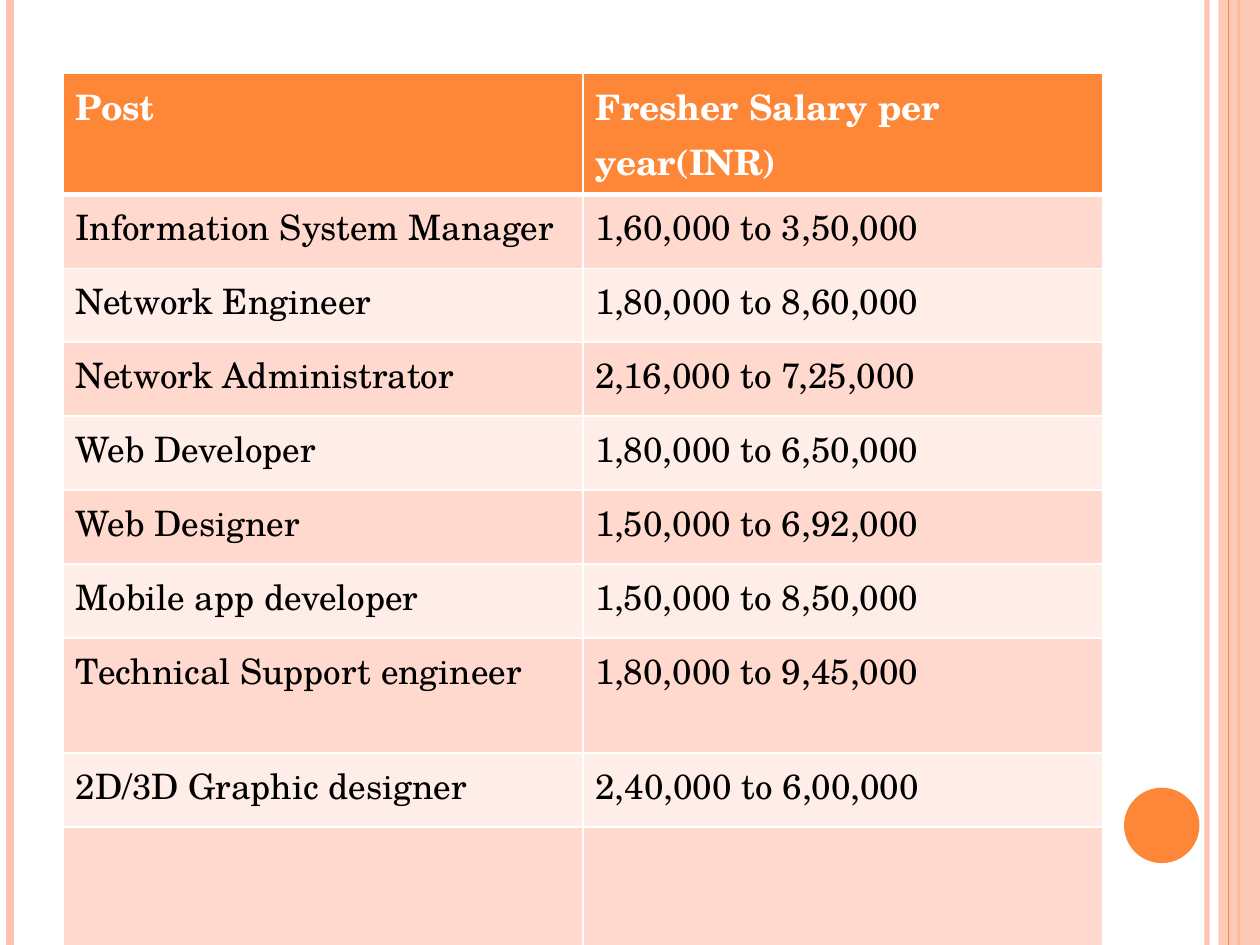
from dataclasses import dataclass

import pptx
import pptx.dml.color
import pptx.enum.shapes
import pptx.oxml
import pptx.oxml.ns
import pptx.util
from pptx.util import Cm

RGBColor = pptx.dml.color.RGBColor
Shapes = pptx.enum.shapes.MSO_SHAPE

ORANGE = RGBColor(0xFE, 0x86, 0x37)
PEACH = RGBColor(0xFE, 0xC3, 0xAE)
BAND_DARK = RGBColor(0xFF, 0xD9, 0xCE)
BAND_LIGHT = RGBColor(0xFF, 0xED, 0xE8)
WHITE = RGBColor(0xFF, 0xFF, 0xFF)
BLACK = RGBColor(0, 0, 0)

SLIDE_WIDTH, SLIDE_HEIGHT = Cm(25.4), Cm(19.05)
ROW_HEIGHT, TALL_ROW_HEIGHT, LAST_ROW_HEIGHT = Cm(1.49), Cm(2.32), Cm(2.69)
COLUMN_WIDTH = Cm(10.48)

TEXT_FORMAT = {"name": "TeX Gyre Schola", "size": pptx.util.Pt(20)}
HEADER_FORMAT = TEXT_FORMAT | {"bold": True}
BODY_FORMAT = TEXT_FORMAT | {"bold": False}


@dataclass(frozen=True)
class Stripe:
    x: float
    color: RGBColor
    points: float
    opacity: int = 100


@dataclass(frozen=True)
class Accent:
    preset: Shapes
    left: float
    top: float
    width: float
    height: float
    color: RGBColor
    opacity: int = 100


@dataclass(frozen=True)
class Salary:
    post: str
    pay: str
    height: Cm = ROW_HEIGHT


BACK_STRIPES = [
    Stripe(24.33, PEACH, 3, 93),
    Stripe(0.21, PEACH, 4.5),
    Stripe(24.97, ORANGE, 1.5),
]
SIDE_BAND = Accent(Shapes.RECTANGLE, 24.56, 0, 0.84, 19.05, PEACH, 87)
BAND_STRIPE = Stripe(24.77, ORANGE, 0.75)
DOT = Accent(Shapes.OVAL, 22.66, 15.88, 1.52, 1.52, ORANGE)

SALARIES = [
    Salary("Post", "Fresher Salary per year(INR)"),
    Salary("Information System Manager", "1,60,000 to 3,50,000"),
    Salary("Network Engineer", "1,80,000 to 8,60,000"),
    Salary("Network Administrator", "2,16,000 to 7,25,000"),
    Salary("Web Developer", "1,80,000 to 6,50,000"),
    Salary("Web Designer", "1,50,000 to 6,92,000"),
    Salary("Mobile app developer", "1,50,000 to 8,50,000"),
    Salary("Technical Support engineer", "1,80,000 to 9,45,000", TALL_ROW_HEIGHT),
    Salary("2D/3D Graphic designer", "2,40,000 to 6,00,000"),
    Salary("", "", LAST_ROW_HEIGHT),
]


def add_xml(parent, tag: str, **attributes):
    child = pptx.oxml.parse_xml(f"<a:{tag} {pptx.oxml.ns.nsdecls('a')}/>")
    for name, value in attributes.items():
        child.set(name, str(value))
    parent.append(child)
    return child


def set_opacity(properties, percent: int) -> None:
    """Make the first solid colour in a properties element translucent."""
    if percent < 100:
        color = next(properties.iter(pptx.oxml.ns.qn("a:srgbClr")))
        add_xml(color, "alpha", val=percent * 1000)


def draw_stripe(slide, stripe: Stripe) -> None:
    line = slide.shapes.add_connector(
        pptx.enum.shapes.MSO_CONNECTOR.STRAIGHT,
        Cm(stripe.x), 0, Cm(stripe.x), SLIDE_HEIGHT,
    )
    line.line.color.rgb = stripe.color
    line.line.width = pptx.util.Pt(stripe.points)
    properties = line._element.spPr
    set_opacity(properties, stripe.opacity)
    add_xml(properties, "effectLst")


def draw_accent(slide, accent: Accent) -> None:
    shape = slide.shapes.add_shape(
        accent.preset,
        Cm(accent.left), Cm(accent.top), Cm(accent.width), Cm(accent.height),
    )
    shape.shadow.inherit = False
    shape.line.fill.background()
    shape.fill.solid()
    shape.fill.fore_color.rgb = accent.color
    set_opacity(shape._element.spPr, accent.opacity)


def set_borders(cell, bottom: float, top: float) -> None:
    """Give a cell white borders; widths are in points."""
    properties = cell._tc.get_or_add_tcPr()
    for index, (side, points) in enumerate(
        {"lnL": 1, "lnR": 1, "lnT": top, "lnB": bottom}.items()
    ):
        border = add_xml(properties, side, w=pptx.util.Pt(points))
        add_xml(add_xml(border, "solidFill"), "srgbClr", val=WHITE)
        properties.remove(border)
        properties.insert(index, border)


def fill_cell(cell, text: str, row: int) -> None:
    is_header = row == 0
    cell.fill.solid()
    cell.fill.fore_color.rgb = (
        ORANGE if is_header else BAND_DARK if row % 2 else BAND_LIGHT
    )
    set_borders(cell, bottom=3 if is_header else 1, top=3 if row == 1 else 1)
    paragraph = cell.text_frame.paragraphs[0]
    if text:
        font = paragraph.add_run().font
        paragraph.runs[0].text = text
    else:
        font = paragraph.font
    for name, value in (HEADER_FORMAT if is_header else BODY_FORMAT).items():
        setattr(font, name, value)
    font.color.rgb = WHITE if is_header else BLACK


def draw_salaries(slide, salaries: list[Salary]) -> None:
    table = slide.shapes.add_table(
        len(salaries), 2, Cm(1.27), Cm(1.48),
        2 * COLUMN_WIDTH, sum(salary.height for salary in salaries),
    ).table
    for column in table.columns:
        column.width = COLUMN_WIDTH
    for index, salary in enumerate(salaries):
        table.rows[index].height = salary.height
        for cell, text in zip(table.rows[index].cells, (salary.post, salary.pay)):
            fill_cell(cell, text, index)


def main() -> None:
    deck = pptx.Presentation()
    deck.slide_width, deck.slide_height = SLIDE_WIDTH, SLIDE_HEIGHT
    slide = deck.slides.add_slide(deck.slide_layouts[6])
    for stripe in BACK_STRIPES:
        draw_stripe(slide, stripe)
    draw_accent(slide, SIDE_BAND)
    draw_stripe(slide, BAND_STRIPE)
    draw_accent(slide, DOT)
    draw_salaries(slide, SALARIES)
    deck.save("out.pptx")


if __name__ == "__main__":
    main()
